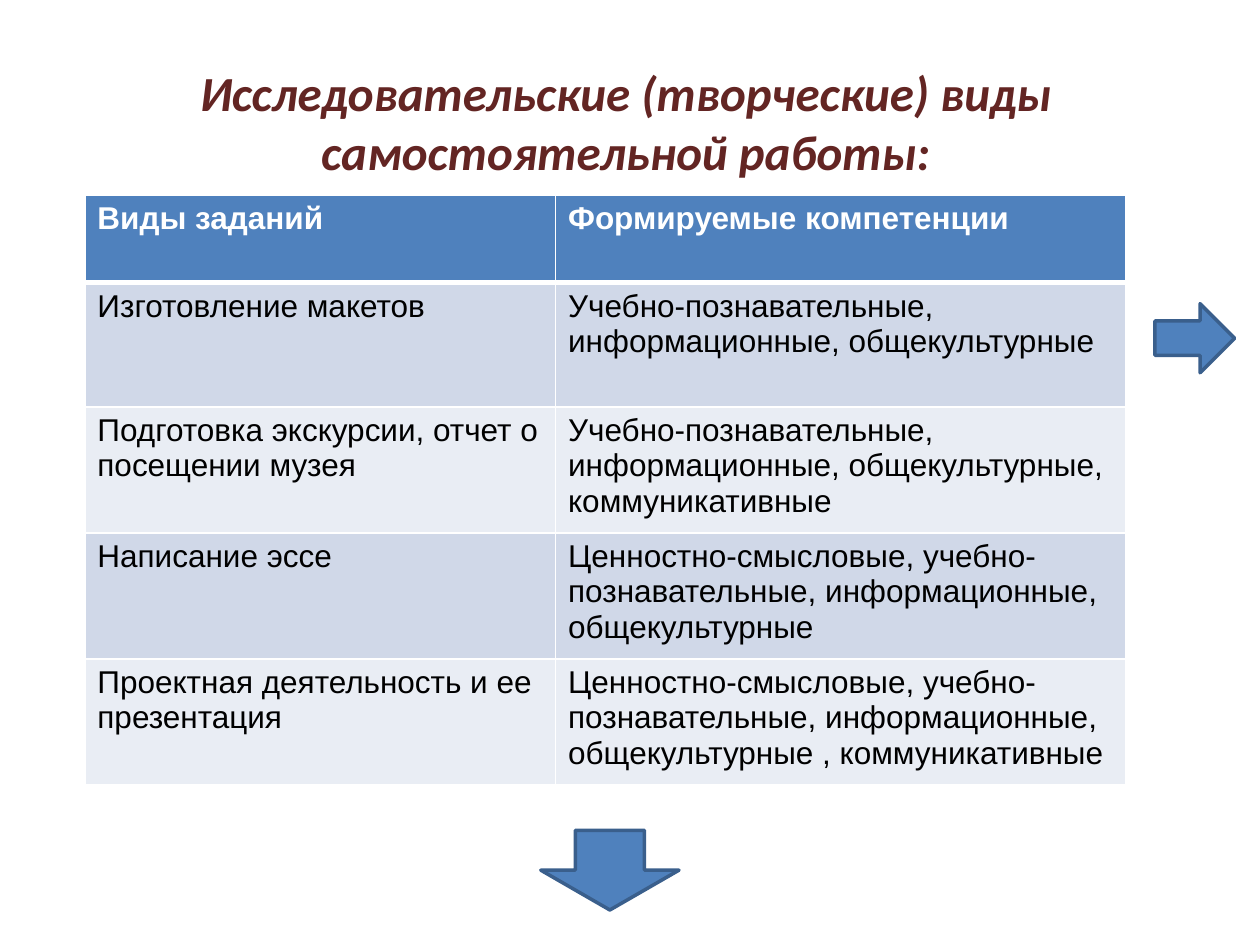
from dataclasses import dataclass
from typing import Any

import pptx
import pptx.dml.color
import pptx.enum.shapes
import pptx.enum.text
import pptx.oxml
import pptx.oxml.ns
import pptx.util

Pt = pptx.util.Pt
SHAPE = pptx.enum.shapes.MSO_SHAPE

WHITE, BLACK, MAROON = "FFFFFF", "000000", "632523"
BLUE, DARK_BLUE = "4F81BD", "3A5F8C"
BANDS = ("D0D8E8", "E9EDF4")

TITLE = "Исследовательские (творческие) виды самостоятельной работы:"
ROWS = (
    ("Виды заданий", "Формируемые компетенции"),
    ("Изготовление макетов",
     "Учебно-познавательные, информационные, общекультурные"),
    ("Подготовка экскурсии, отчет о посещении музея",
     "Учебно-познавательные, информационные, общекультурные, коммуникативные"),
    ("Написание эссе",
     "Ценностно-смысловые, учебно-познавательные, информационные, общекультурные"),
    ("Проектная деятельность и ее презентация",
     "Ценностно-смысловые, учебно-познавательные, информационные, "
     "общекультурные , коммуникативные"),
)
COLUMN_WIDTHS = (269, 326)
ROW_HEIGHTS = (50, 71, 72, 72, 72)


@dataclass(frozen=True)
class Box:
    left: float
    top: float
    width: float
    height: float

    def lengths(self) -> tuple:
        return tuple(Pt(n) for n in (self.left, self.top, self.width, self.height))


@dataclass(frozen=True)
class Arrow:
    kind: Any
    box: Box


TITLE_BOX = Box(60, 32, 595, 75)
TABLE_BOX = Box(48.5, 111.5, sum(COLUMN_WIDTHS), sum(ROW_HEIGHTS))
ARROWS = (
    Arrow(SHAPE.RIGHT_ARROW, Box(660, 173.5, 45.5, 39.5)),
    Arrow(SHAPE.DOWN_ARROW, Box(309, 474.5, 79, 45.5)),
)


def color(value: str) -> pptx.dml.color.RGBColor:
    return pptx.dml.color.RGBColor.from_string(value)


def format_font(font: Any, text_color: str, **values: Any) -> None:
    for name, value in values.items():
        setattr(font, name, value)
    font.color.rgb = color(text_color)


def add_title(slide: Any) -> None:
    title = slide.shapes.title
    for name, value in zip(("left", "top", "width", "height"), TITLE_BOX.lengths()):
        setattr(title, name, value)
    frame = title.text_frame
    frame.text = TITLE
    frame.word_wrap = True
    frame.vertical_anchor = pptx.enum.text.MSO_ANCHOR.MIDDLE
    paragraph = frame.paragraphs[0]
    paragraph.alignment = pptx.enum.text.PP_ALIGN.CENTER
    format_font(paragraph.runs[0].font, MAROON,
                name="Calibri", size=Pt(28), bold=True, italic=True)


def add_borders(cell: Any, top: float, bottom: float) -> None:
    """Draw white cell borders; must come before the cell's fill is set."""
    properties = cell._tc.get_or_add_tcPr()
    namespace = pptx.oxml.ns.nsdecls("a")
    for side, width in {"L": 1, "R": 1, "T": top, "B": bottom}.items():
        properties.append(pptx.oxml.parse_xml(
            f'<a:ln{side} {namespace} w="{Pt(width)}"><a:solidFill>'
            f'<a:srgbClr val="{WHITE}"/></a:solidFill></a:ln{side}>'))


def fill_cell(cell: Any, text: str, row: int) -> None:
    header = row == 0
    add_borders(cell, top=3 if row == 1 else 1, bottom=3 if header else 1)
    cell.fill.solid()
    cell.fill.fore_color.rgb = color(BLUE if header else BANDS[(row - 1) % 2])
    cell.text = text
    format_font(cell.text_frame.paragraphs[0].runs[0].font,
                WHITE if header else BLACK,
                name="Arial", size=Pt(18), bold=header)


def add_task_table(slide: Any) -> None:
    table = slide.shapes.add_table(
        len(ROWS), len(COLUMN_WIDTHS), *TABLE_BOX.lengths()).table
    for column, width in zip(table.columns, COLUMN_WIDTHS):
        column.width = Pt(width)
    for row, height in zip(table.rows, ROW_HEIGHTS):
        row.height = Pt(height)
    for row_index, texts in enumerate(ROWS):
        for column_index, text in enumerate(texts):
            fill_cell(table.cell(row_index, column_index), text, row_index)


def add_arrow(slide: Any, arrow: Arrow) -> None:
    shape = slide.shapes.add_shape(arrow.kind, *arrow.box.lengths())
    shape.shadow.inherit = False
    shape.fill.solid()
    shape.fill.fore_color.rgb = color(BLUE)
    shape.line.color.rgb = color(DARK_BLUE)
    shape.line.width = Pt(2)


def main() -> None:
    presentation = pptx.Presentation()
    presentation.slide_width, presentation.slide_height = Pt(720), Pt(540)
    title_only = presentation.slide_layouts[5]
    slide = presentation.slides.add_slide(title_only)
    add_title(slide)
    add_task_table(slide)
    for arrow in ARROWS:
        add_arrow(slide, arrow)
    presentation.save("out.pptx")


if __name__ == "__main__":
    main()
